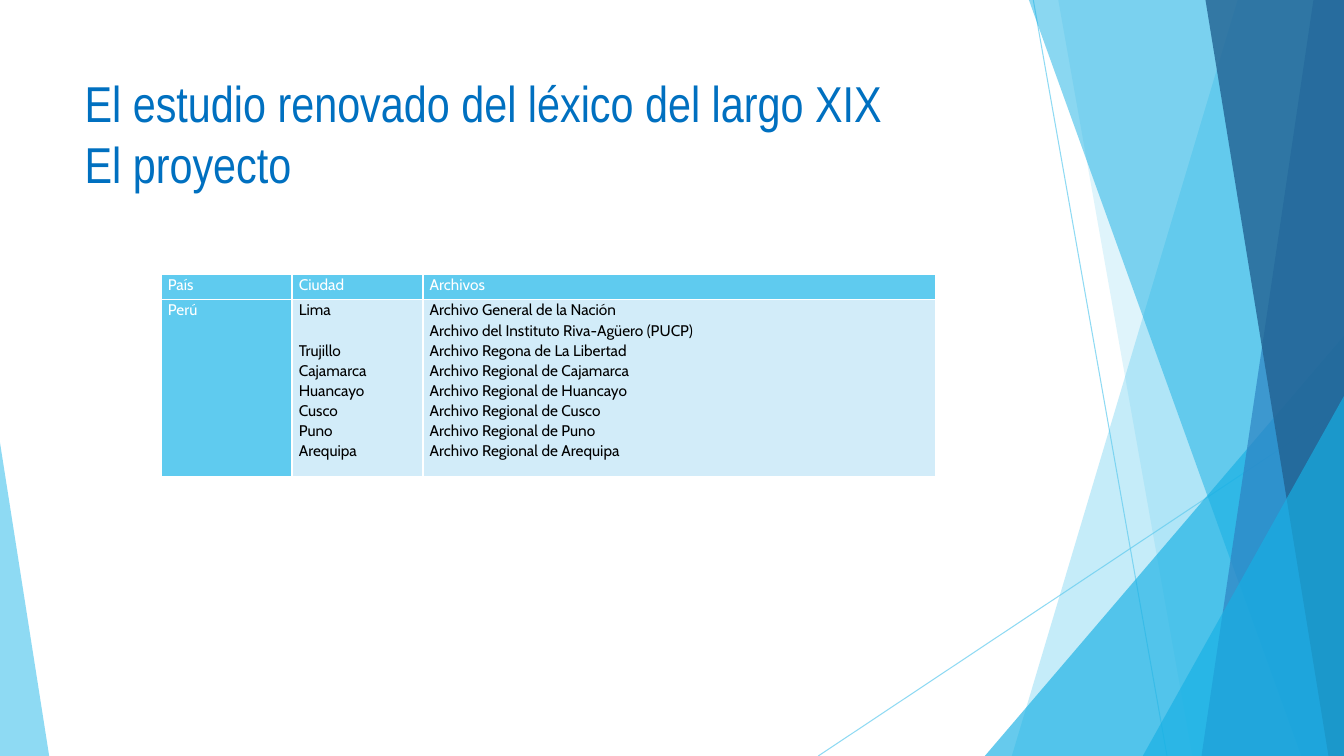
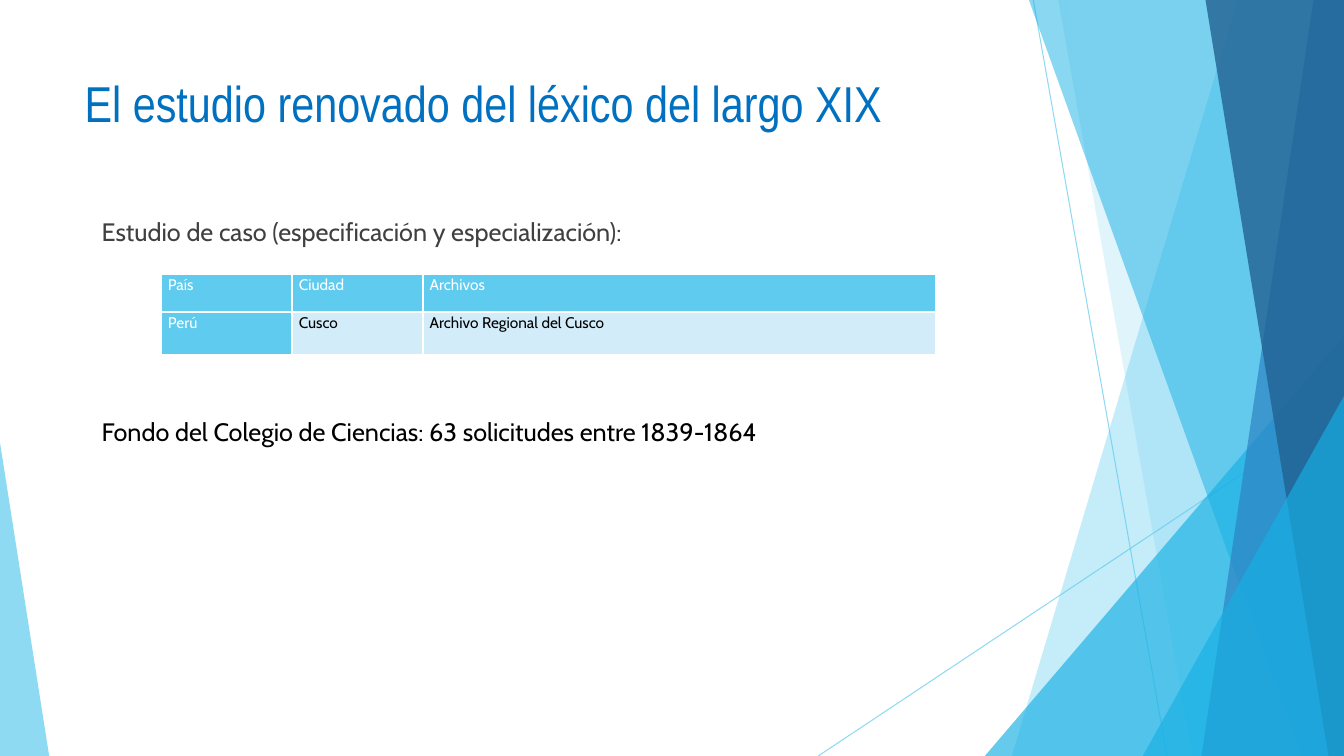
from lxml import etree
from pptx import Presentation
from pptx.dml.color import RGBColor
from pptx.enum.shapes import MSO_CONNECTOR, MSO_SHAPE
from pptx.enum.text import MSO_ANCHOR, MSO_AUTO_SIZE, PP_ALIGN
from pptx.oxml.ns import qn
from pptx.util import Cm, Pt

STRAIGHT = MSO_CONNECTOR.STRAIGHT
TRIANGLE = MSO_SHAPE.ISOSCELES_TRIANGLE
TOP = MSO_ANCHOR.TOP
LEFT = PP_ALIGN.LEFT
NO_AUTOFIT = MSO_AUTO_SIZE.NONE

WHITE = RGBColor(0xFF, 0xFF, 0xFF)
BLACK = RGBColor(0x00, 0x00, 0x00)
GREY = RGBColor(0x40, 0x40, 0x40)
TITLE_BLUE = RGBColor(0x00, 0x70, 0xC0)
SKY = RGBColor(0x5F, 0xCB, 0xEF)
CYAN = RGBColor(0x17, 0xB0, 0xE4)
MID_BLUE = RGBColor(0x2E, 0x83, 0xC3)
DEEP_BLUE = RGBColor(0x22, 0x62, 0x92)
PALE_BLUE = RGBColor(0xD2, 0xEC, 0xF9)

TITLE_FONT = "Arial Narrow"
BODY_FONT = "Cabin"
PLAIN_TABLE_STYLE = "{2D5ABB26-0587-4C30-8999-92F81FD0307C}"

SLIDE_WIDTH, SLIDE_HEIGHT = 33.87, 19.05
FACETS_BOX = (20.62, 0, 13.25, SLIDE_HEIGHT)
CORNER_BOX = (0, 11.15, 1.24, 7.9)
TITLE_BOX = (1.88, 1.7, 23.88, 3.12)
BODY_BOX = (2.31, 5.33, 23.88, 11.86)
NOTE_BOX = (2.31, 10.36, 23.22, 1.02)
TABLE_CORNER = (4.06, 6.91)
COLUMN_WIDTHS = (3.3, 3.3, 12.93)
CELL_MARGIN = 0.17
TABLE_LINE = Pt(14.4)

TITLE = "El estudio renovado del léxico del largo XIX"
HEADER = (["País"], ["Ciudad"], ["Archivos"])
CITIES = ["Lima", "Trujillo", "Cajamarca", "Huancayo", "Cusco", "Puno", "Arequipa"]
ARCHIVES = [
    "Archivo General de la Nación",
    "Archivo del Instituto Riva-Agüero (PUCP)",
    "Archivo Regona de La Libertad",
    "Archivo Regional de Cajamarca",
    "Archivo Regional de Huancayo",
    "Archivo Regional de Cusco",
    "Archivo Regional de Puno",
    "Archivo Regional de Arequipa",
]


def lengths(box):
    """Turn a box in centimetres into lengths."""
    return [Cm(value) for value in box]


def set_opacity(shape, percent):
    """Make the colour of a shape partly transparent."""
    color = shape.element.xpath("./p:spPr//a:srgbClr")[0]
    etree.SubElement(color, qn("a:alpha"), val=str(percent * 1000))


def style_font(paragraph, name, size, color):
    """Set the font of a whole paragraph."""
    font = paragraph.font
    font.name, font.size, font.bold = name, Pt(size), False
    font.color.rgb = color


def paint(shape, color, opacity):
    """Give a shape a transparent fill without outline or shadow."""
    shape.shadow.inherit = False
    shape.fill.solid()
    shape.fill.fore_color.rgb = color
    shape.line.fill.background()
    set_opacity(shape, opacity)
    return shape


def add_thin_line(shapes, start, end):
    """Draw a fine sky-blue line."""
    line = shapes.add_connector(STRAIGHT, *lengths(start + end))
    line.line.color.rgb = SKY
    line.line.width = Pt(0.75)
    set_opacity(line, 70)
    etree.SubElement(line.element.spPr, qn("a:effectLst"))
    return line


def add_band(shapes, box, top_offset, bottom_offset, color, opacity):
    """Draw a slanted band that fills the box up to its right edge."""
    left, top, width, height = box
    right, bottom = left + width, top + height
    builder = shapes.build_freeform(Cm(left + top_offset), Cm(top))
    corners = [(right, top), (right, bottom), (left + bottom_offset, bottom)]
    builder.add_line_segments([lengths(corner) for corner in corners])
    return paint(builder.convert_to_shape(), color, opacity)


def add_triangle(shapes, box, apex, color, opacity):
    """Draw a right triangle whose apex lies at one side of the box."""
    triangle = shapes.add_shape(TRIANGLE, *lengths(box))
    triangle.adjustments[0] = apex
    return paint(triangle, color, opacity)


def add_facets(shapes, box):
    """Draw the overlapping facets along the right edge."""
    left, top, width, height = box
    right, bottom = left + width, top + height

    def corner_triangle(x, y):
        corner = (left + x, top + y, width - x, height - y)
        return add_triangle(shapes, corner, 1, CYAN, 66)

    return [
        add_thin_line(shapes, (left + 5.42, top), (left + 8.79, bottom)),
        add_thin_line(shapes, (right, top + 10.24), (left, bottom)),
        add_band(shapes, box, 10.57, 4.88, SKY, 36),
        add_band(shapes, box, 6.05, 9.43, SKY, 20),
        corner_triangle(4.2, 8.46),
        add_band(shapes, box, 5.31, 12.17, CYAN, 50),
        add_band(shapes, box, 12.48, 9.66, MID_BLUE, 70),
        add_band(shapes, box, 9.76, 12.86, DEEP_BLUE, 80),
        corner_triangle(8.18, 9.98),
    ]


def decorate_master(presentation, slide):
    """Draw the shared decoration and move it to the slide master."""
    decoration = add_facets(slide.shapes, FACETS_BOX)
    decoration.append(add_triangle(slide.shapes, CORNER_BOX, 0, SKY, 70))
    tree = presentation.slide_master.shapes.element
    for index, shape in enumerate(decoration):
        shape.element.xpath(".//p:cNvPr")[0].set("id", str(100 + index))
        tree.insert(2 + index, shape.element)


def place_text(shape, box, text, name, size, color):
    """Place a text shape and write one left-aligned paragraph in it."""
    shape.left, shape.top, shape.width, shape.height = lengths(box)
    frame = shape.text_frame
    frame.text = text
    frame.word_wrap = True
    frame.auto_size = NO_AUTOFIT
    frame.vertical_anchor = TOP
    paragraph = frame.paragraphs[0]
    paragraph.alignment = LEFT
    style_font(paragraph, name, size, color)
    return paragraph


def add_title(slide, text):
    """Fill the title placeholder."""
    place_text(slide.shapes.title, TITLE_BOX, text, TITLE_FONT, 36, TITLE_BLUE)


def add_body(slide, box, text):
    """Fill the body placeholder with a paragraph without bullet."""
    paragraph = place_text(slide.placeholders[1], box, text, BODY_FONT, 18, GREY)
    paragraph.space_before = Pt(10)
    properties = paragraph._p.get_or_add_pPr()
    properties.set("marL", "0")
    properties.set("indent", "0")
    bullet = etree.Element(qn("a:buNone"))
    properties.insert_element_before(bullet, "a:tabLst", "a:defRPr", "a:extLst")


def add_note(slide, box, text):
    """Add a line of text below the table."""
    note = slide.shapes.add_textbox(*lengths(box))
    place_text(note, box, text, BODY_FONT, 18, BLACK)


def format_cell(cell, lines, fill, color):
    """Write the lines of a cell and set its borders, margins and fill."""
    cell.margin_left = cell.margin_right = Cm(CELL_MARGIN)
    cell.margin_top = cell.margin_bottom = 0
    cell.text = "\n".join(lines)
    for paragraph in cell.text_frame.paragraphs:
        paragraph.line_spacing = 1.07
        style_font(paragraph, BODY_FONT, 11, color)
    properties = cell._tc.get_or_add_tcPr()
    for side in ("lnL", "lnR", "lnT", "lnB"):
        border = etree.SubElement(properties, qn("a:" + side), w=str(Pt(1)))
        solid = etree.SubElement(border, qn("a:solidFill"))
        etree.SubElement(solid, qn("a:srgbClr"), val=str(WHITE))
    cell.fill.solid()
    cell.fill.fore_color.rgb = fill


def add_archive_table(slide, corner, row_heights, cities, archives):
    """Add the table of countries, cities and archives."""
    rows = (HEADER, (["Perú"], cities, archives))
    box = (*corner, sum(COLUMN_WIDTHS), sum(row_heights))
    frame = slide.shapes.add_table(len(rows), len(HEADER), *lengths(box))
    frame.element.xpath(".//a:tableStyleId")[0].text = PLAIN_TABLE_STYLE
    table = frame.table
    table.horz_banding = False
    for column, width in zip(table.columns, COLUMN_WIDTHS):
        column.width = Cm(width)
    for row_index, row in enumerate(rows):
        table.rows[row_index].height = Cm(row_heights[row_index])
        for column_index, lines in enumerate(row):
            heading = row_index == 0 or column_index == 0
            fill, color = (SKY, WHITE) if heading else (PALE_BLUE, BLACK)
            format_cell(table.cell(row_index, column_index), lines, fill, color)
    return table


def build_project_slide(presentation):
    """Build the slide that lists all archives."""
    slide = presentation.slides.add_slide(presentation.slide_layouts[5])
    add_title(slide, TITLE + "\vEl proyecto")
    table = add_archive_table(slide, TABLE_CORNER, (0.64, 4.47), CITIES, ARCHIVES)
    table.cell(1, 1).text_frame.paragraphs[0].space_after = TABLE_LINE
    return slide


def build_case_slide(presentation):
    """Build the slide about the case study."""
    slide = presentation.slides.add_slide(presentation.slide_layouts[1])
    add_title(slide, TITLE)
    add_body(slide, BODY_BOX, "Estudio de caso (especificación y especialización):")
    add_archive_table(
        slide, TABLE_CORNER, (0.95, 1.08), ["Cusco"], ["Archivo Regional del Cusco"]
    )
    add_note(
        slide, NOTE_BOX, "Fondo del Colegio de Ciencias: 63 solicitudes entre 1839-1864"
    )


def main():
    """Build and save the presentation."""
    presentation = Presentation()
    presentation.slide_width = Cm(SLIDE_WIDTH)
    presentation.slide_height = Cm(SLIDE_HEIGHT)
    project_slide = build_project_slide(presentation)
    decorate_master(presentation, project_slide)
    build_case_slide(presentation)
    presentation.save("out.pptx")


if __name__ == "__main__":
    main()
